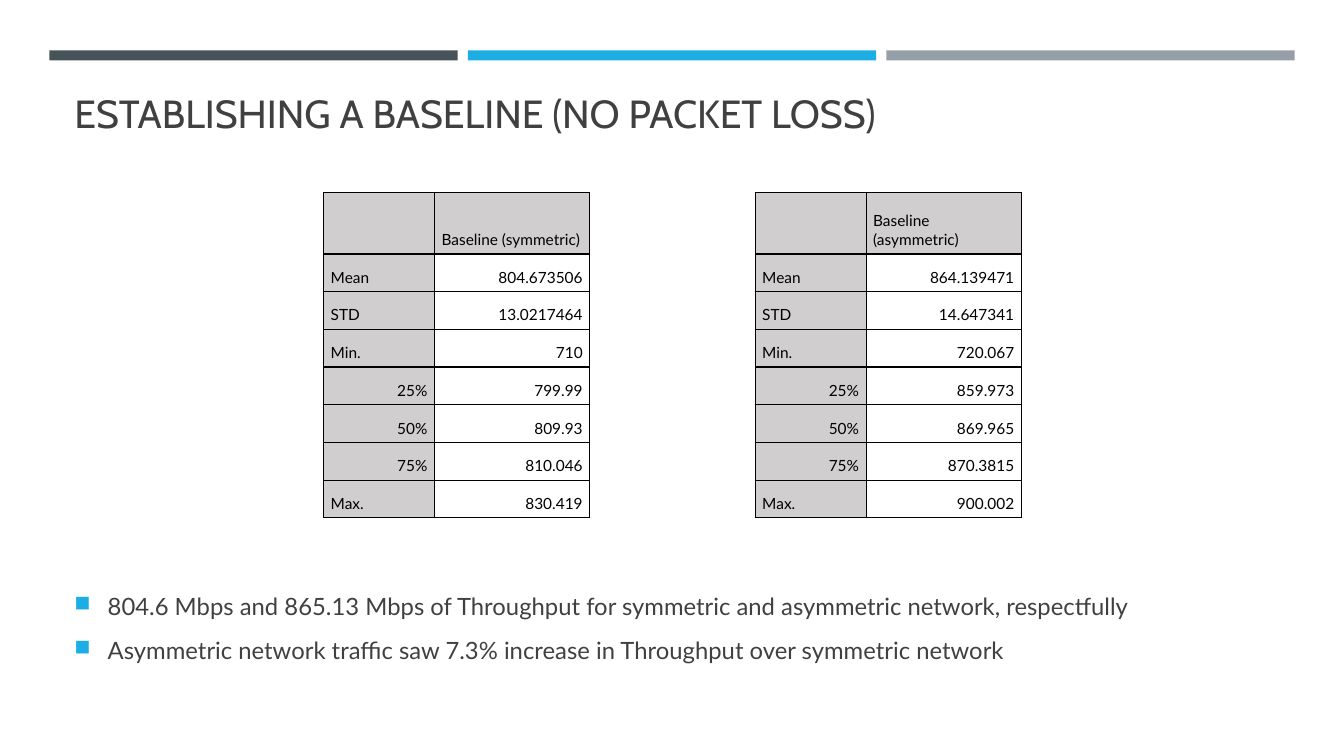
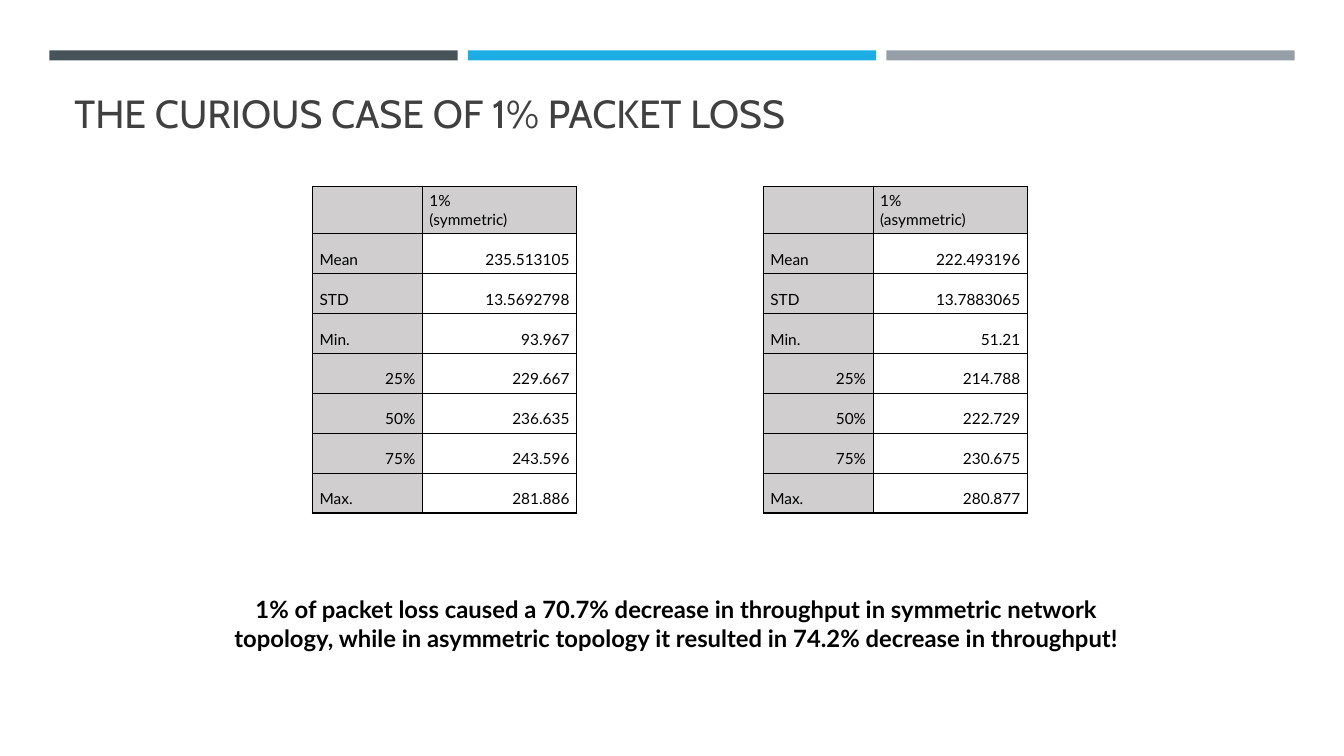
import pptx
import pptx.util
import pptx.dml.color
import pptx.enum.shapes
import pptx.enum.text
import pptx.oxml
import pptx.oxml.ns
from dataclasses import dataclass
from lxml import etree

Inches, Pt = pptx.util.Inches, pptx.util.Pt
ALIGN = pptx.enum.text.PP_ALIGN
ANCHOR = pptx.enum.text.MSO_ANCHOR


@dataclass(frozen=True)
class Theme:
    title_font: str = "Cabin"
    body_font: str = "Lato"
    text: str = "404040"
    black: str = "000000"
    accent: str = "1CADE4"
    header_fill: str = "D0CECE"
    cell_fill: str = "FFFFFF"
    bands: tuple = ("465359", "1CADE4", "969FA7")
    title_size: int = 28
    body_size: int = 17
    table_size: int = 11


THEME = Theme()
ROW_LABELS = ["Mean", "STD", "Min.", "25%", "50%", "75%", "Max."]

BASELINE = {
    "title": "ESTABLISHING A BASELINE (NO PACKET LOSS)",
    "tables": [
        ("Baseline (symmetric)",
         ["804.673506", "13.0217464", "710", "799.99", "809.93", "810.046", "830.419"]),
        ("Baseline (asymmetric)",
         ["864.139471", "14.647341", "720.067", "859.973", "869.965", "870.3815", "900.002"]),
    ],
    "lefts": (3.21, 7.49), "top": 1.91, "height": 3.23,
    "header_height": 0.61, "columns": (1.1, 1.54),
}
BULLETS = [
    "804.6 Mbps and 865.13 Mbps of Throughput for symmetric and asymmetric network, respectfully",
    "Asymmetric network traffic saw 7.3% increase in Throughput over symmetric network",
]

PACKET_LOSS = {
    "title": "THE CURIOUS CASE OF 1% PACKET LOSS",
    "tables": [
        ("1%\n(symmetric)",
         ["235.513105", "13.5692798", "93.967", "229.667", "236.635", "243.596", "281.886"]),
        ("1%\n(asymmetric)",
         ["222.493196", "13.7883065", "51.21", "214.788", "222.729", "230.675", "280.877"]),
    ],
    "lefts": (3.1, 7.57), "top": 1.85, "height": 3.24,
    "header_height": 0.47, "columns": (1.09, 1.53),
}
CONCLUSION = ("1% of packet loss caused a 70.7% decrease in throughput in symmetric network "
              "topology, while in asymmetric topology it resulted in 74.2% decrease in throughput!")


def rgb(value):
    return pptx.dml.color.RGBColor.from_string(value)


def write(text_frame, text, size, color, font=THEME.body_font, bold=False, align=ALIGN.LEFT):
    """Fill a text frame, one paragraph per line, in a single style."""
    text_frame.text = text
    for paragraph in text_frame.paragraphs:
        paragraph.alignment = align
        for run in paragraph.runs:
            run.font.name = font
            run.font.size = Pt(size)
            run.font.bold = bold
            run.font.color.rgb = rgb(color)


def add_text(slide, box, text, size, color, anchor=ANCHOR.TOP, **style):
    shape = slide.shapes.add_textbox(*map(Inches, box))
    shape.text_frame.word_wrap = True
    shape.text_frame.vertical_anchor = anchor
    write(shape.text_frame, text, size, color, **style)
    return shape.text_frame


def add_bands(slide):
    width, gap = 4.05, 0.1
    for index, color in enumerate(THEME.bands):
        band = slide.shapes.add_shape(
            pptx.enum.shapes.MSO_SHAPE.RECTANGLE,
            Inches(0.49 + index * (width + gap)), Inches(0.5), Inches(width), Inches(0.1))
        band.shadow.inherit = False
        band.fill.solid()
        band.fill.fore_color.rgb = rgb(color)
        band.line.fill.background()


def add_borders(cell):
    properties = cell._tc.get_or_add_tcPr()
    for index, side in enumerate(("lnL", "lnR", "lnT", "lnB")):
        line = pptx.oxml.parse_xml(
            f'<a:{side} {pptx.oxml.ns.nsdecls("a")} w="{Pt(1)}"><a:solidFill>'
            f'<a:srgbClr val="{THEME.black}"/></a:solidFill></a:{side}>')
        properties.insert(index, line)


def add_statistics_table(slide, left, header, values, layout):
    rows = [("", header), *zip(ROW_LABELS, values)]
    table = slide.shapes.add_table(
        len(rows), 2, Inches(left), Inches(layout["top"]),
        Inches(sum(layout["columns"])), Inches(layout["height"])).table
    for column, width in zip(table.columns, layout["columns"]):
        column.width = Inches(width)
    row_height = (layout["height"] - layout["header_height"]) / len(values)
    for row_index, row in enumerate(rows):
        is_header = row_index == 0
        table.rows[row_index].height = Inches(layout["header_height"] if is_header else row_height)
        for column_index, text in enumerate(row):
            cell = table.cell(row_index, column_index)
            is_value = column_index == 1 and not is_header
            cell.margin_left = cell.margin_right = Inches(0.07)
            cell.margin_top = cell.margin_bottom = Inches(0.05)
            cell.vertical_anchor = ANCHOR.BOTTOM
            cell.fill.solid()
            cell.fill.fore_color.rgb = rgb(THEME.cell_fill if is_value else THEME.header_fill)
            right = is_value or text.endswith("%")
            write(cell.text_frame, text, THEME.table_size, THEME.black,
                  align=ALIGN.RIGHT if right else ALIGN.LEFT)
            add_borders(cell)


def add_bullet(paragraph):
    paragraph.line_spacing = 1.1
    paragraph.space_before = Pt(3)
    paragraph.space_after = Pt(6)
    properties = paragraph._p.get_or_add_pPr()
    properties.set("marL", str(Inches(0.33)))
    properties.set("indent", str(-Inches(0.33)))
    qualified = pptx.oxml.ns.qn
    color = etree.SubElement(properties, qualified("a:buClr"))
    etree.SubElement(color, qualified("a:srgbClr"), val=THEME.accent)
    etree.SubElement(properties, qualified("a:buSzPct"), val="92000")
    etree.SubElement(properties, qualified("a:buChar"), char="■")


def add_comparison_slide(presentation, content):
    """Add a slide with the bands, the title and two tables side by side."""
    slide = presentation.slides.add_slide(presentation.slide_layouts[6])
    add_bands(slide)
    add_text(slide, (0.64, 0.77, 12.06, 0.63), content["title"], THEME.title_size, THEME.text,
             anchor=ANCHOR.BOTTOM, font=THEME.title_font)
    for left, (header, values) in zip(content["lefts"], content["tables"]):
        add_statistics_table(slide, left, header, values, content)
    return slide


def main():
    presentation = pptx.Presentation()
    presentation.slide_width = Inches(13.33)
    presentation.slide_height = Inches(7.5)

    slide = add_comparison_slide(presentation, BASELINE)
    body = add_text(slide, (0.64, 5.64, 12.06, 1.16), "\n".join(BULLETS),
                    THEME.body_size, THEME.text, anchor=ANCHOR.MIDDLE)
    for paragraph in body.paragraphs:
        add_bullet(paragraph)

    slide = add_comparison_slide(presentation, PACKET_LOSS)
    add_text(slide, (2.21, 5.85, 9, 0.71), CONCLUSION, THEME.body_size, THEME.black,
             bold=True, align=ALIGN.CENTER)

    presentation.save("out.pptx")


if __name__ == "__main__":
    main()
